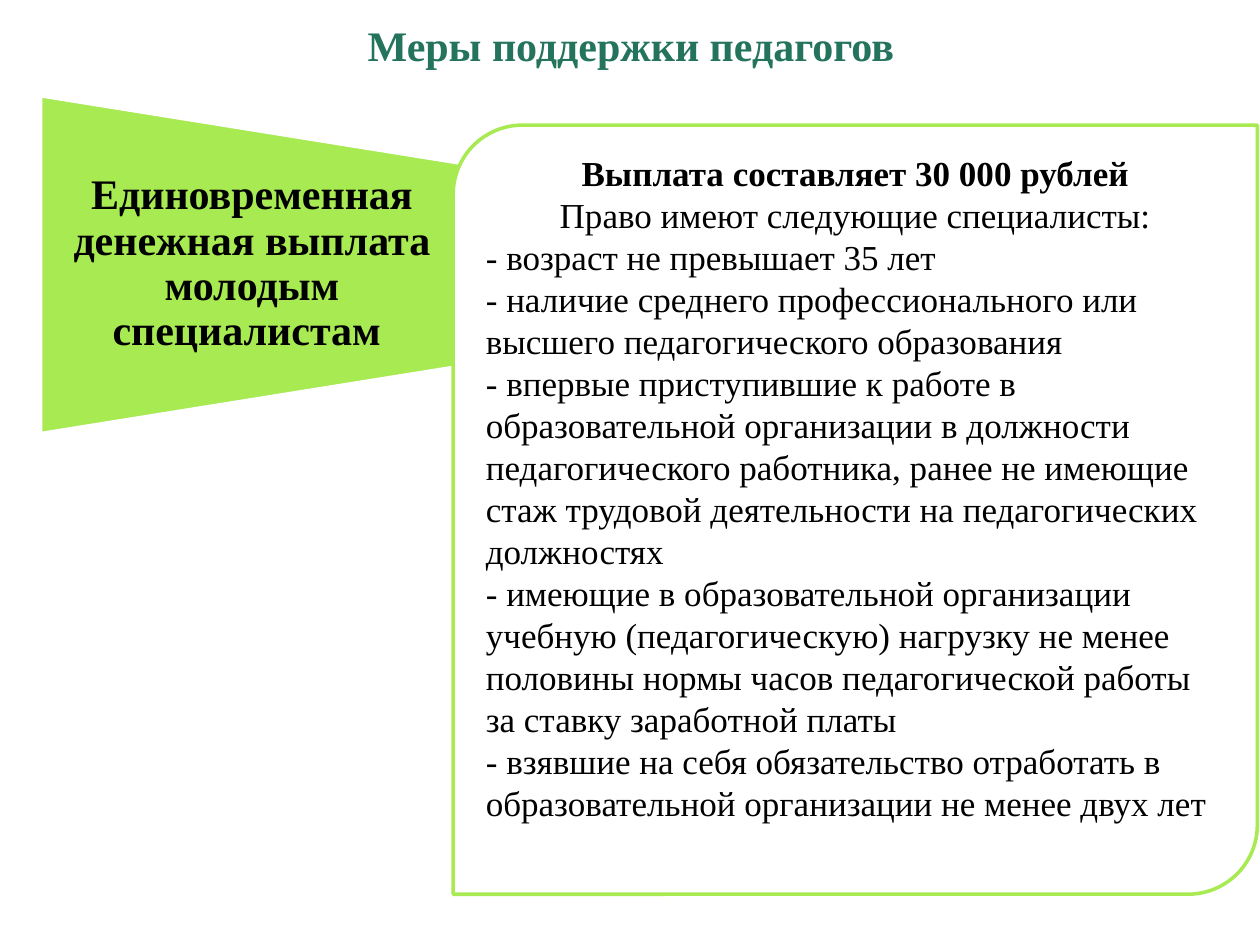
import pptx
import pptx.util
import pptx.dml.color
import pptx.enum.shapes
import pptx.enum.text

Pt = pptx.util.Pt
SHAPES = pptx.enum.shapes.MSO_SHAPE
ALIGN = pptx.enum.text.PP_ALIGN
ANCHOR = pptx.enum.text.MSO_ANCHOR

COLORS = {"title": "23735D", "accent": "A7EA52", "paper": "FFFFFF", "ink": "000000"}
FONT = "Times New Roman"

CONDITIONS = [
    "возраст не превышает 35 лет",
    "наличие среднего профессионального или высшего педагогического образования",
    "впервые приступившие к работе в образовательной организации в должности "
    "педагогического работника, ранее не имеющие стаж трудовой деятельности "
    "на педагогических должностях",
    "имеющие в образовательной организации учебную (педагогическую) нагрузку "
    "не менее половины нормы часов педагогической работы за ставку заработной платы",
    "взявшие на себя обязательство отработать в образовательной организации "
    "не менее двух лет",
]


def color(name):
    return pptx.dml.color.RGBColor.from_string(COLORS[name])


def write(paragraph, text, size=20, bold=False, ink="ink", align=ALIGN.LEFT, spacing=None):
    paragraph.alignment = align
    if spacing:
        paragraph.line_spacing = spacing
    run = paragraph.add_run()
    run.text = text
    run.font.name = FONT
    run.font.size = Pt(size)
    run.font.bold = bold
    run.font.color.rgb = color(ink)


def set_frame(frame, anchor, side=7.2, edge=3.6):
    frame.word_wrap = True
    frame.auto_size = pptx.enum.text.MSO_AUTO_SIZE.NONE
    frame.vertical_anchor = anchor
    frame.margin_left = frame.margin_right = Pt(side)
    frame.margin_top = frame.margin_bottom = Pt(edge)


def add_panel(slide, kind, box, fill, outline):
    panel = slide.shapes.add_shape(kind, *map(Pt, box))
    panel.shadow.inherit = False
    panel.fill.solid()
    panel.fill.fore_color.rgb = color(fill)
    panel.line.color.rgb = color(outline)
    panel.line.width = Pt(2)
    return panel


def add_title(slide, text):
    title = slide.shapes.title
    title.left, title.top, title.width, title.height = map(Pt, (11.5, 0, 698, 51))
    set_frame(title.text_frame, ANCHOR.MIDDLE)
    write(title.text_frame.paragraphs[0], text, size=24, bold=True, ink="title",
          align=ALIGN.CENTER)


def add_measure(slide, text):
    funnel = add_panel(slide, SHAPES.FLOWCHART_MANUAL_OPERATION,
                       (47, 31, 193, 240.5), "accent", "paper")
    funnel.rotation = 270
    label = slide.shapes.add_textbox(*map(Pt, (23.75, 93, 240.5, 116)))
    set_frame(label.text_frame, ANCHOR.MIDDLE, side=12.2, edge=0)
    write(label.text_frame.paragraphs[0], text, size=24, bold=True,
          align=ALIGN.CENTER, spacing=0.9)


def add_terms(slide, amount, intro, conditions):
    card = add_panel(slide, SHAPES.ROUND_2_DIAG_RECTANGLE,
                     (259, 71.5, 459.5, 439.5), "paper", "accent")
    card.adjustments[0] = 0.09
    card.adjustments[1] = 0
    frame = card.text_frame
    set_frame(frame, ANCHOR.TOP)
    write(frame.paragraphs[0], amount, bold=True, align=ALIGN.CENTER)
    write(frame.add_paragraph(), intro, align=ALIGN.CENTER)
    for condition in conditions:
        write(frame.add_paragraph(), f"- {condition}")


def main():
    deck = pptx.Presentation()
    deck.slide_width, deck.slide_height = Pt(720), Pt(540)
    slide = deck.slides.add_slide(deck.slide_layouts[5])
    add_title(slide, "Меры поддержки педагогов")
    add_measure(slide, "Единовременная денежная выплата молодым специалистам ")
    add_terms(slide, "Выплата составляет 30 000 рублей",
              "Право имеют следующие специалисты:", CONDITIONS)
    deck.save("out.pptx")


if __name__ == "__main__":
    main()
